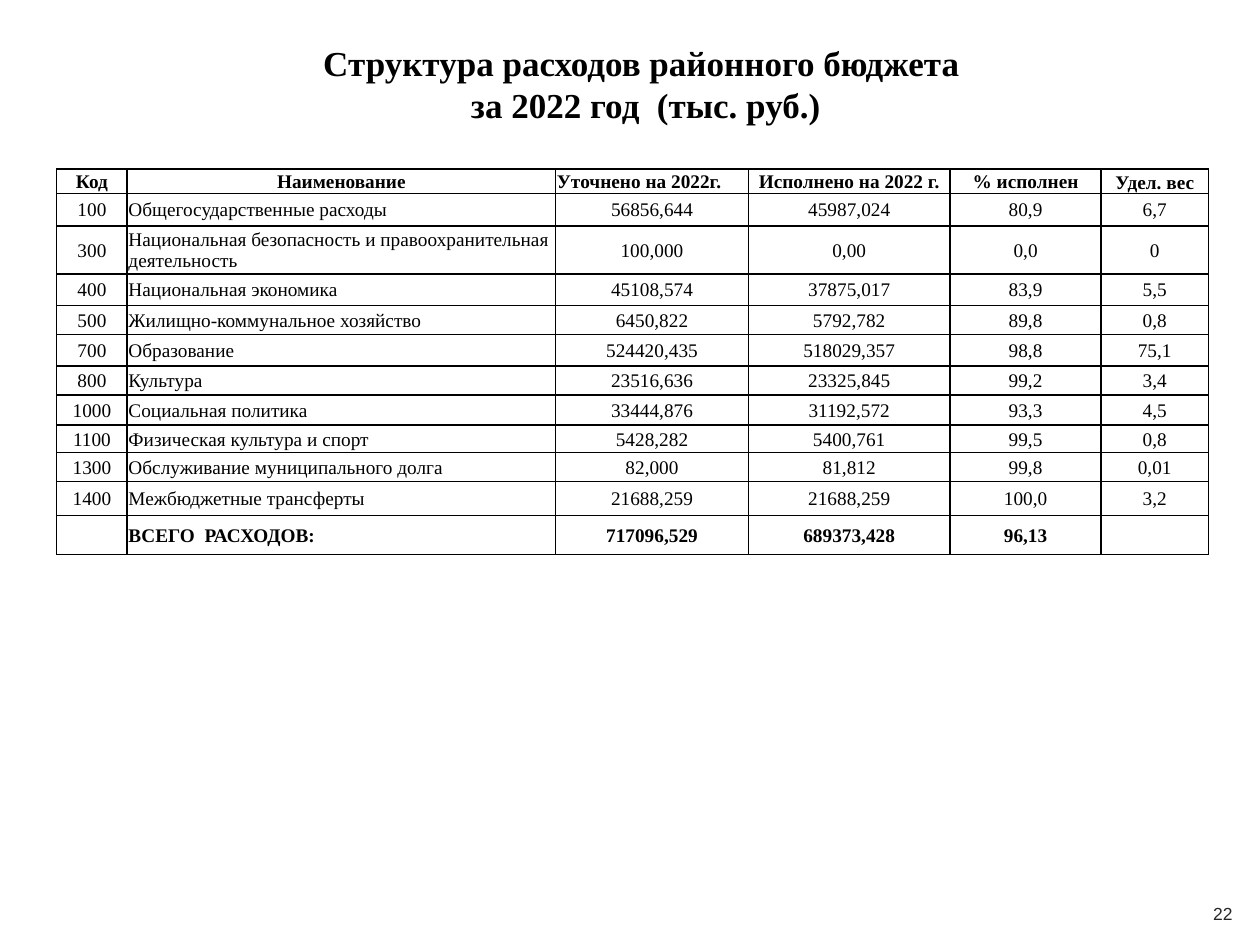
from lxml import etree
from pptx import Presentation
from pptx import util as u
from pptx.dml.color import RGBColor
from pptx.enum import text
from pptx.oxml.ns import qn

BLACK = RGBColor(0x00, 0x00, 0x00)
DARK_GRAY = RGBColor(0x26, 0x26, 0x26)
SERIF = "Times New Roman"
ALIGN = text.PP_ALIGN
ANCHOR = text.MSO_ANCHOR

TITLE = "Структура расходов районного бюджета \vза 2022 год  (тыс. руб.)"
COLUMN_WIDTHS = [0.56, 3.4, 1.53, 1.6, 1.2, 0.85]
ROW_HEIGHTS = [0.19, 0.26, 0.38, 0.25, 0.23, 0.25, 0.23, 0.24, 0.22, 0.23, 0.27, 0.31]
EXPENSES = [
    ["Код", "Наименование", "Уточнено на 2022г.", "Исполнено на 2022 г.", "% исполнен", "Удел. вес"],
    ["100", "Общегосударственные расходы", "56856,644", "45987,024", "80,9", "6,7"],
    ["300", "Национальная безопасность и правоохранительная деятельность",
     "100,000", "0,00", "0,0", "0"],
    ["400", "Национальная экономика", "45108,574", "37875,017", "83,9", "5,5"],
    ["500", "Жилищно-коммунальное хозяйство", "6450,822", "5792,782", "89,8", "0,8"],
    ["700", "Образование", "524420,435", "518029,357", "98,8", "75,1"],
    ["800", "Культура ", "23516,636", "23325,845", "99,2", "3,4"],
    ["1000", "Социальная политика", "33444,876", "31192,572", "93,3", "4,5"],
    ["1100", "Физическая культура и спорт", "5428,282", "5400,761", "99,5", "0,8"],
    ["1300", "Обслуживание муниципального долга", "82,000", "81,812", "99,8", "0,01"],
    ["1400", "Межбюджетные трансферты", "21688,259", "21688,259", "100,0", "3,2"],
    ["", "ВСЕГО  РАСХОДОВ:", "717096,529", "689373,428", "96,13", ""],
]
HEADER_ROW, TOTAL_ROW = 0, len(EXPENSES) - 1
NAME_COLUMN, PLAN_COLUMN, SHARE_COLUMN = 1, 2, 5


def apply_format(target, values):
    for attribute, value in values.items():
        setattr(target, attribute, value)


def write(paragraph, wording, size, color=BLACK, font=SERIF, bold=False, align=ALIGN.CENTER):
    paragraph.text = wording
    paragraph.alignment = align
    for run in paragraph.runs:
        apply_format(run.font, {"name": font, "size": u.Pt(size), "bold": bold})
        run.font.color.rgb = color


def add_label(slide, place, wording, **style):
    label = slide.shapes.add_textbox(*map(u.Inches, place))
    apply_format(label.text_frame, {"word_wrap": True, "vertical_anchor": ANCHOR.MIDDLE})
    write(label.text_frame.paragraphs[0], wording, **style)


def add_borders(cell):
    properties = cell._tc.get_or_add_tcPr()
    for position, side in enumerate(("a:lnL", "a:lnR", "a:lnT", "a:lnB")):
        border = etree.Element(qn(side), w=str(u.Pt(1)))
        fill = etree.SubElement(border, qn("a:solidFill"))
        etree.SubElement(fill, qn("a:srgbClr"), val=str(BLACK))
        properties.insert(position, border)


def cell_alignment(row, column):
    if column == NAME_COLUMN and row != HEADER_ROW:
        return ALIGN.LEFT if EXPENSES[row][0] == "300" else ALIGN.JUSTIFY
    if column == PLAN_COLUMN and row == HEADER_ROW:
        return ALIGN.JUSTIFY
    return ALIGN.CENTER


def fill_cell(cell, row, column):
    is_share_header = row == HEADER_ROW and column == SHARE_COLUMN
    apply_format(cell, {
        "margin_left": u.Inches(0.01),
        "margin_right": u.Inches(0.01),
        "margin_top": u.Inches(0.01),
        "margin_bottom": 0,
        "vertical_anchor": ANCHOR.BOTTOM if is_share_header else ANCHOR.MIDDLE,
    })
    cell.fill.background()
    add_borders(cell)
    paragraph = cell.text_frame.paragraphs[0]
    write(paragraph, EXPENSES[row][column], 11,
          bold=row in (HEADER_ROW, TOTAL_ROW), align=cell_alignment(row, column))
    if not paragraph.runs:
        etree.SubElement(paragraph._p, qn("a:endParaRPr"), sz="1100")


def add_expense_table(slide):
    place = (0.45, 1.34, sum(COLUMN_WIDTHS), sum(ROW_HEIGHTS))
    table = slide.shapes.add_table(
        len(ROW_HEIGHTS), len(COLUMN_WIDTHS), *map(u.Inches, place)).table
    apply_format(table, {"first_row": False, "horz_banding": False})
    for column, width in zip(table.columns, COLUMN_WIDTHS):
        column.width = u.Inches(width)
    for row, height in enumerate(ROW_HEIGHTS):
        table.rows[row].height = u.Inches(height)
        for column in range(len(COLUMN_WIDTHS)):
            fill_cell(table.cell(row, column), row, column)


def main():
    deck = Presentation()
    apply_format(deck, {"slide_width": u.Inches(10), "slide_height": u.Inches(7.5)})
    slide = deck.slides.add_slide(deck.slide_layouts[6])
    add_label(slide, (0.5, 0.18, 9.25, 0.97), TITLE, size=20, bold=True)
    add_label(slide, (9.45, 7.05, 0.51, 0.4), "22", size=10, color=DARK_GRAY, font="Arial")
    add_expense_table(slide)
    deck.save("out.pptx")


if __name__ == "__main__":
    main()
